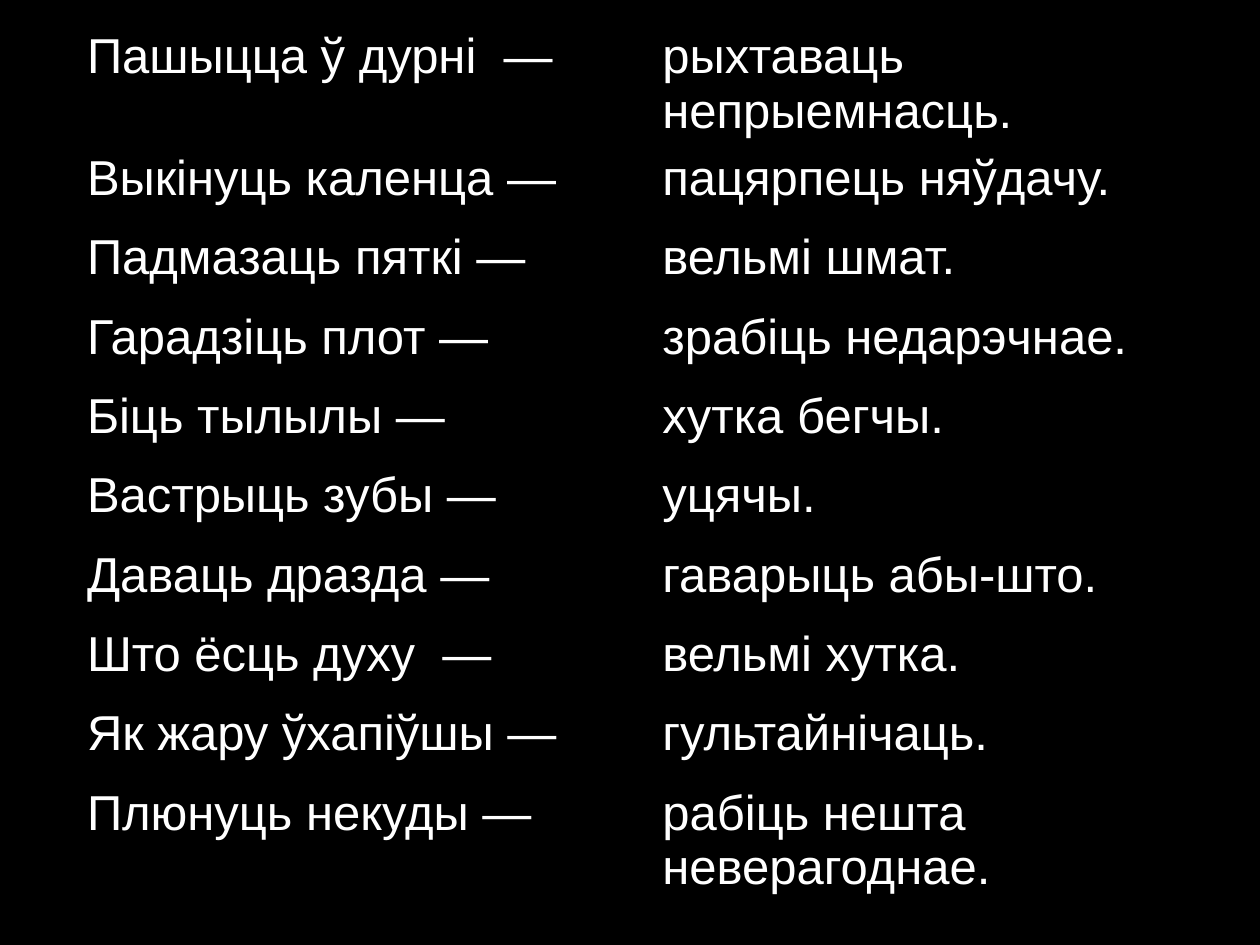
import pptx
import pptx.dml.color
import pptx.oxml.ns
import pptx.util
from pptx.util import Cm

COLORS = {"background": "000000", "text": "FFFFFF"}
NO_STYLE_NO_GRID = "{2D5ABB26-0587-4C30-8999-92F81FD0307C}"

IDIOMS = [
    ("Пашыцца ў дурні  —", "рыхтаваць непрыемнасць."),
    ("Выкінуць каленца —", "пацярпець няўдачу."),
    ("Падмазаць пяткі —", "вельмі шмат."),
    ("Гарадзіць плот —", "зрабіць недарэчнае."),
    ("Біць тылылы —", "хутка бегчы."),
    ("Вастрыць зубы —", "уцячы."),
    ("Даваць дразда —", "гаварыць абы-што."),
    ("Што ёсць духу  —", "вельмі хутка."),
    ("Як жару ўхапіўшы —", "гультайнічаць."),
    ("Плюнуць некуды —", "рабіць нешта неверагоднае."),
]


def write_text(text_frame, text, *, size=28, font="Arial", color="text"):
    run = text_frame.paragraphs[0].add_run()
    run.text = text
    run.font.size = pptx.util.Pt(size)
    run.font.name = font
    run.font.bold = False
    run.font.color.rgb = pptx.dml.color.RGBColor.from_string(COLORS[color])


# Slide with a plain dark background
presentation = pptx.Presentation()
presentation.slide_width = Cm(25.4)
presentation.slide_height = Cm(19.05)
slide = presentation.slides.add_slide(presentation.slide_layouts[6])
background = slide.background.fill
background.solid()
background.fore_color.rgb = pptx.dml.color.RGBColor.from_string(COLORS["background"])

# Table without banding or grid
column_widths = [Cm(11.6), Cm(11)]
row_height = Cm(1.6)
frame = slide.shapes.add_table(
    len(IDIOMS), len(column_widths), Cm(1.5), Cm(0.46),
    sum(column_widths), row_height * len(IDIOMS),
)
table = frame.table
table.first_row = False
table.horz_banding = False
style = table._tbl.tblPr.find(pptx.oxml.ns.qn("a:tableStyleId"))
style.text = NO_STYLE_NO_GRID

for column, width in zip(table.columns, column_widths):
    column.width = width

# Idioms on the left, meanings on the right
for row_index, idiom in enumerate(IDIOMS):
    table.rows[row_index].height = row_height
    for column_index, text in enumerate(idiom):
        cell = table.cell(row_index, column_index)
        cell.fill.background()
        write_text(cell.text_frame, text)

presentation.save("out.pptx")
